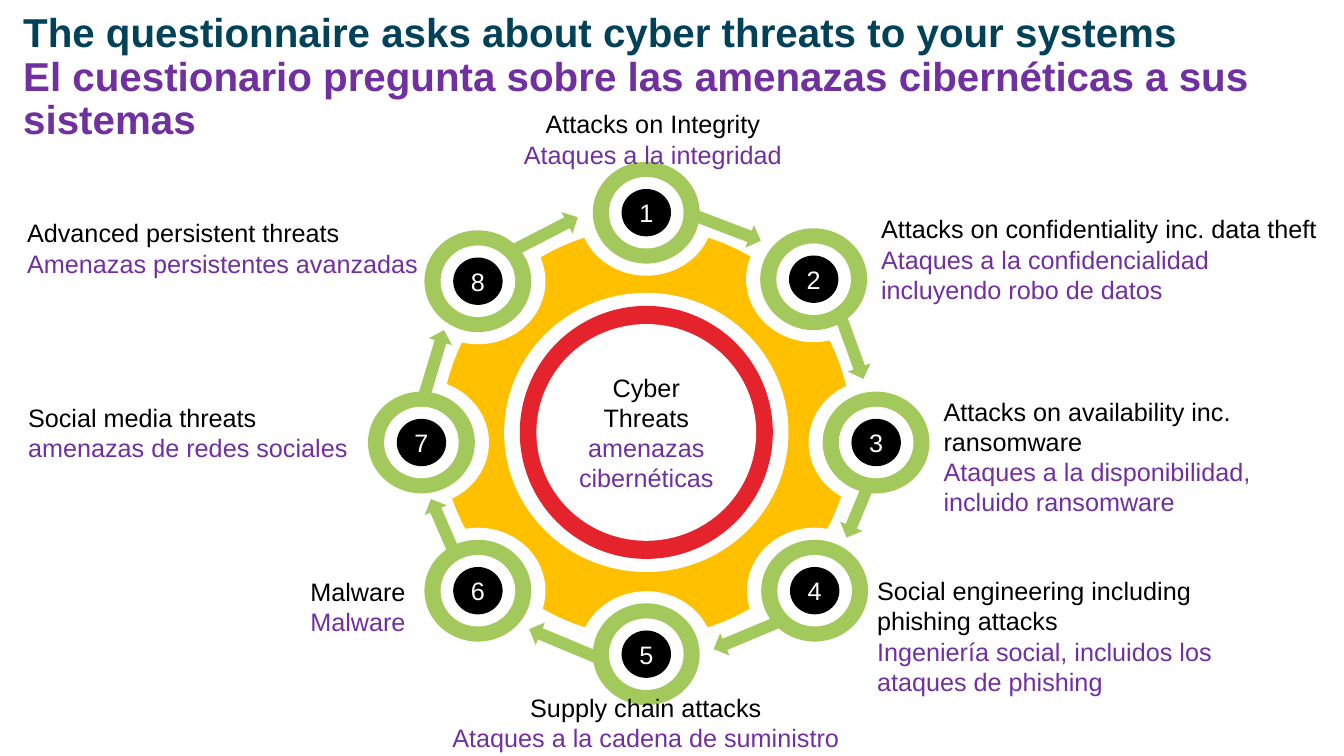
from collections import namedtuple

from pptx import Presentation
from pptx.dml.color import RGBColor
from pptx.enum.shapes import MSO_SHAPE
from pptx.enum.text import MSO_ANCHOR, MSO_AUTO_SIZE, PP_ALIGN
from pptx.util import Inches, Pt

Box = namedtuple("Box", "left top width height")
Threat = namedtuple("Threat", "x y arrow_x arrow_y arrow_length arrow_angle")

FONT = "Arial"
BLACK, WHITE, PURPLE, TEAL = "000000", "FFFFFF", "7030A0", "024259"
GREEN, AMBER, RED = "A3C95C", "FFC000", "E5232C"

THREATS = [
    Threat(0, -2.18, 0.8, -2.03, 0.72, 20.8),
    Threat(1.66, -1.52, 2.03, -0.87, 0.72, 70),
    Threat(2.28, 0.1, 2.1, 0.77, 0.59, 112.6),
    Threat(1.67, 1.57, 1, 2.01, 0.72, 157.3),
    Threat(0, 2.2, -0.83, 2.09, 0.72, 202.7),
    Threat(-1.67, 1.57, -2.01, 0.95, 0.63, 246.5),
    Threat(-2.23, 0.1, -2.11, -0.67, 0.72, 286.7),
    Threat(-1.67, -1.5, -1, -1.97, 0.72, 332.8),
]

LABELS = [
    (Box(4.63, 1.03, 3.69, 0.71), "Attacks on Integrity", "Ataques a la integridad", PP_ALIGN.CENTER),
    (Box(8.64, 2.07, 4.56, 1.01), "Attacks on confidentiality inc. data theft",
     "Ataques a la confidencialidad incluyendo robo de datos", PP_ALIGN.LEFT),
    (Box(9.26, 3.88, 3.71, 1.31), "Attacks on availability inc. ransomware",
     "Ataques a la disponibilidad, incluido ransomware", PP_ALIGN.LEFT),
    (Box(8.6, 5.66, 4.15, 1.31), "Social engineering including phishing attacks",
     "Ingeniería social, incluidos los ataques de phishing", PP_ALIGN.LEFT),
    (Box(3.68, 6.82, 5.45, 0.71), "Supply chain attacks",
     "Ataques a la cadena de suministro", PP_ALIGN.CENTER),
    (Box(2.98, 5.67, 1.67, 0.71), "Malware", "Malware", PP_ALIGN.LEFT),
    (Box(0.18, 3.94, 3.45, 0.71), "Social media threats", "amenazas de redes sociales", PP_ALIGN.LEFT),
    (Box(0.17, 2.11, 4.62, 0.71), "Advanced persistent threats",
     "Amenazas persistentes avanzadas", PP_ALIGN.LEFT),
]


def color(value):
    """Turn a hex string into a colour."""
    return RGBColor.from_string(value)


def place(box):
    """Convert a box in inches to slide lengths."""
    return [Inches(length) for length in box]


def style(paragraph, shade, align=PP_ALIGN.CENTER):
    """Format a paragraph of body text."""
    paragraph.alignment = align
    paragraph.font.name = FONT
    paragraph.font.size = Pt(18)
    paragraph.font.color.rgb = color(shade)


def write_pair(frame, english, spanish, align):
    """Write an English paragraph and its Spanish translation."""
    frame.word_wrap = True
    frame.text = f"{english}\n{spanish}"
    for paragraph, shade in zip(frame.paragraphs, (BLACK, PURPLE)):
        style(paragraph, shade, align)


def add_centred(page, kind, x, y, width, height, fill):
    """Add a plain filled shape around a centre point."""
    box = Box(x - width / 2, y - height / 2, width, height)
    shape = page.shapes.add_shape(kind, *place(box))
    shape.shadow.inherit = False
    shape.fill.solid()
    shape.fill.fore_color.rgb = color(fill)
    shape.line.fill.background()
    return shape


def add_title(page, box):
    """Fill the title placeholder in two languages."""
    title = page.shapes.title
    title.left, title.top, title.width, title.height = place(box)
    frame = title.text_frame
    frame.margin_left = frame.margin_right = frame.margin_top = frame.margin_bottom = 0
    frame.word_wrap = True
    frame.auto_size = MSO_AUTO_SIZE.NONE
    frame.vertical_anchor = MSO_ANCHOR.MIDDLE
    paragraph = frame.paragraphs[0]
    paragraph.text = (
        "The questionnaire asks about cyber threats to your systems\v"
        "El cuestionario pregunta sobre las amenazas cibernéticas a sus sistemas"
    )
    paragraph.alignment = PP_ALIGN.LEFT
    paragraph.line_spacing = 0.9
    paragraph.font.name = FONT
    paragraph.font.size = Pt(28.8)
    paragraph.font.bold = True
    for span, shade in zip(paragraph.runs, (TEAL, PURPLE)):
        span.font.color.rgb = color(shade)


def add_node(page, x, y, number):
    """Add a numbered green ring."""
    add_centred(page, MSO_SHAPE.OVAL, x, y, 1.06, 1.01, GREEN)
    add_centred(page, MSO_SHAPE.OVAL, x, y, 0.74, 0.71, WHITE)
    badge = add_centred(page, MSO_SHAPE.OVAL, x, y, 0.49, 0.47, BLACK)
    frame = badge.text_frame
    frame.margin_left = frame.margin_right = frame.margin_top = frame.margin_bottom = 0
    frame.word_wrap = False
    frame.vertical_anchor = MSO_ANCHOR.MIDDLE
    frame.text = str(number)
    style(frame.paragraphs[0], WHITE)


def add_wheel(page, box):
    """Draw the hub, the eight threats and the arrows between them."""
    x = box.left + box.width / 2
    y = box.top + box.height / 2
    add_centred(page, MSO_SHAPE.OVAL, x, y, 4.07, 4.05, AMBER)
    for threat in THREATS:
        add_centred(page, MSO_SHAPE.OVAL, x + threat.x, y + threat.y, 1.34, 1.25, WHITE)
    add_centred(page, MSO_SHAPE.OVAL, x, y, 2.82, 2.77, WHITE)
    add_centred(page, MSO_SHAPE.OVAL, x, y, 2.51, 2.51, RED)
    hub = add_centred(page, MSO_SHAPE.OVAL, x, y, 2.18, 2.15, WHITE)
    hub.text_frame.vertical_anchor = MSO_ANCHOR.MIDDLE
    write_pair(hub.text_frame, "Cyber Threats", "amenazas cibernéticas", PP_ALIGN.CENTER)
    for number, threat in enumerate(THREATS, start=1):
        add_node(page, x + threat.x, y + threat.y, number)
    for threat in THREATS:
        arrow = add_centred(page, MSO_SHAPE.RIGHT_ARROW, x + threat.arrow_x,
                            y + threat.arrow_y, threat.arrow_length, 0.24, GREEN)
        arrow.rotation = threat.arrow_angle


def add_label(page, box, english, spanish, align):
    """Add the bilingual label of one threat."""
    label = page.shapes.add_textbox(*place(box))
    write_pair(label.text_frame, english, spanish, align)


def main():
    """Build and save the deck."""
    deck = Presentation()
    deck.slide_width, deck.slide_height = Inches(13.33), Inches(7.5)
    page = deck.slides.add_slide(deck.slide_layouts[5])
    add_title(page, Box(0.23, -0.03, 12.38, 1.61))
    add_wheel(page, Box(3.62, 1.6, 5.58, 5.38))
    for label in LABELS:
        add_label(page, *label)
    deck.save("out.pptx")


if __name__ == "__main__":
    main()
